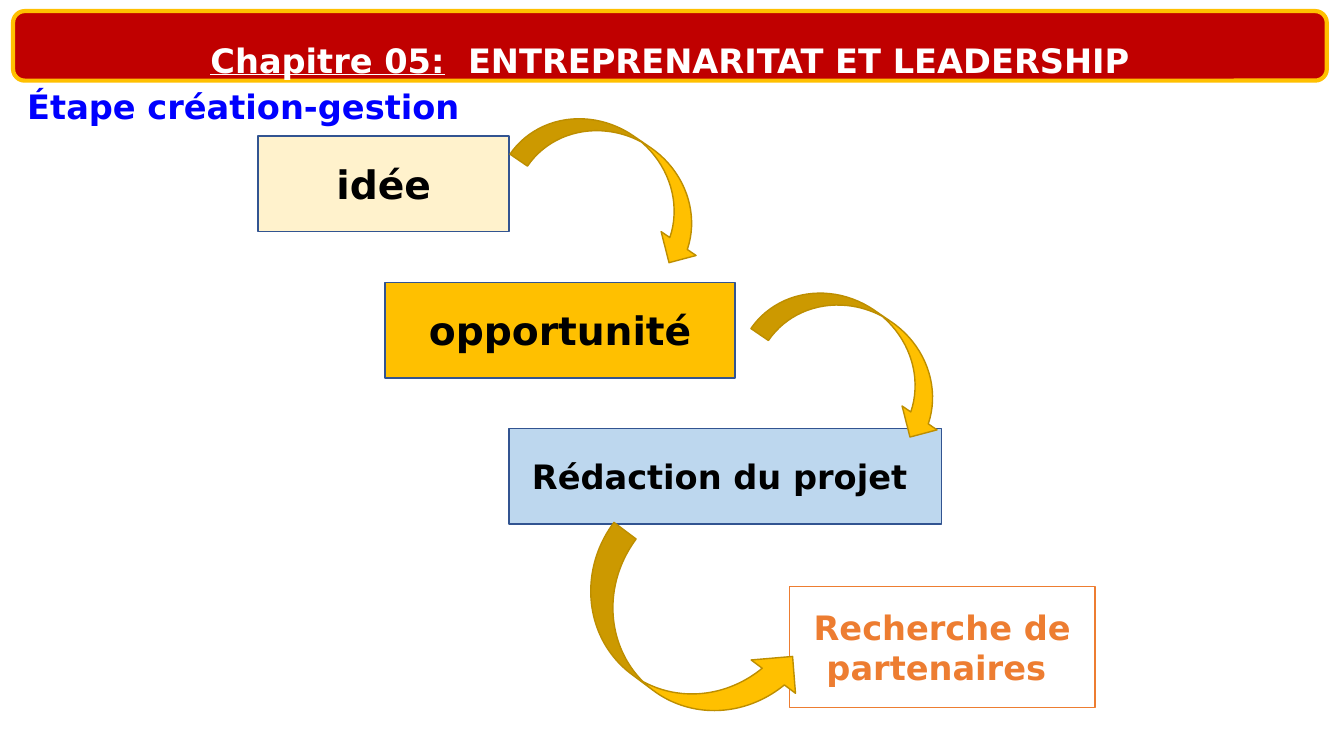
import pptx
import pptx.dml.color
import pptx.enum.shapes
import pptx.enum.text
import pptx.util

Inches = pptx.util.Inches
SHAPE = pptx.enum.shapes.MSO_SHAPE
ALIGN = pptx.enum.text.PP_ALIGN
ANCHOR = pptx.enum.text.MSO_ANCHOR

FONT = "DejaVu Sans"
COLORS = {
    "red": "C00000", "gold": "FFC000", "dark_gold": "BD8E00",
    "cream": "FFF2CC", "sky": "BDD7EE", "navy": "325491",
    "orange": "ED7D31", "blue": "0000FF", "black": "000000", "white": "FFFFFF",
}


def color(name):
    return pptx.dml.color.RGBColor.from_string(COLORS[name])


def add_text(paragraph, text, size=24, ink="black", underline=False):
    run = paragraph.add_run()
    run.text = text
    run.font.name = FONT
    run.font.size = pptx.util.Pt(size)
    run.font.bold = True
    run.font.underline = underline
    run.font.color.rgb = color(ink)


def add_outlined(slide, preset, box, fill, line, width=1):
    """Add a preset shape; a fill of None leaves it hollow."""
    shape = slide.shapes.add_shape(preset, *map(Inches, box))
    shape.shadow.inherit = False
    if fill:
        shape.fill.solid()
        shape.fill.fore_color.rgb = color(fill)
    else:
        shape.fill.background()
    shape.line.color.rgb = color(line)
    shape.line.width = pptx.util.Pt(width)
    return shape


def add_banner(slide, box):
    banner = add_outlined(slide, SHAPE.FLOWCHART_ALTERNATE_PROCESS, box, "red", "gold", 3)
    banner.text_frame.word_wrap = True
    banner.text_frame.vertical_anchor = ANCHOR.TOP
    chapter = banner.text_frame.paragraphs[0]
    chapter.alignment = ALIGN.CENTER
    chapter.line_spacing = 1.5
    add_text(chapter, "Chapitre 05:", ink="white", underline=True)
    add_text(chapter, "  ENTREPRENARITAT ET LEADERSHIP", ink="white")


def add_heading(slide, box):
    heading = slide.shapes.title
    heading.left, heading.top, heading.width, heading.height = map(Inches, box)
    frame = heading.text_frame
    frame.word_wrap = False
    frame.auto_size = pptx.enum.text.MSO_AUTO_SIZE.NONE
    frame.vertical_anchor = ANCHOR.TOP
    frame.paragraphs[0].alignment = ALIGN.LEFT
    add_text(frame.paragraphs[0], "Étape création-gestion", ink="blue")


def add_step(slide, box, text, fill, line="navy", **text_format):
    step = add_outlined(slide, SHAPE.RECTANGLE, box, fill, line)
    step.text_frame.word_wrap = True
    step.text_frame.vertical_anchor = ANCHOR.MIDDLE
    step.text_frame.paragraphs[0].alignment = ALIGN.CENTER
    add_text(step.text_frame.paragraphs[0], text, **text_format)


def add_arrow(slide, preset, box, rotation):
    arrow = add_outlined(slide, preset, box, "gold", "dark_gold")
    arrow.rotation = rotation


def add_staircase(slide, left, top):
    """Place the four steps and the arrows that lead down from each to the next."""
    rise, height = 1.45, 0.95
    steps = [
        (0, 2.49, "idée", "cream", 28),
        (1.26, 3.47, "opportunité", "gold", 28),
        (2.49, 4.29, "Rédaction du projet ", "sky", 24),
    ]
    for level, (indent, width, text, fill, size) in enumerate(steps):
        box = (left + indent, top + level * rise, width, height)
        add_step(slide, box, text, fill, size=size)
    add_step(slide, (left + 5.27, top + 4.47, 3.03, 1.2), "Recherche de partenaires ",
             None, line="orange", ink="orange")

    for across, down in ((2.55, 0.01), (4.94, 1.74)):
        add_arrow(slide, SHAPE.CURVED_DOWN_ARROW, (left + across, top + down, 2.12, 0.84), 34.3)
    add_arrow(slide, SHAPE.CURVED_UP_ARROW, (left + 2.95, top + 4.47, 2.49, 1.1), 36.9)


def main():
    deck = pptx.Presentation()
    deck.slide_width, deck.slide_height = Inches(13.33), Inches(7.5)
    slide = deck.slides.add_slide(deck.slide_layouts.get_by_name("Title Only"))
    add_banner(slide, (0.13, 0.11, 13.03, 0.69))
    add_heading(slide, (0.17, 0.8, 4.5, 0.5))
    add_staircase(slide, 2.56, 1.35)
    deck.save("out.pptx")


if __name__ == "__main__":
    main()
